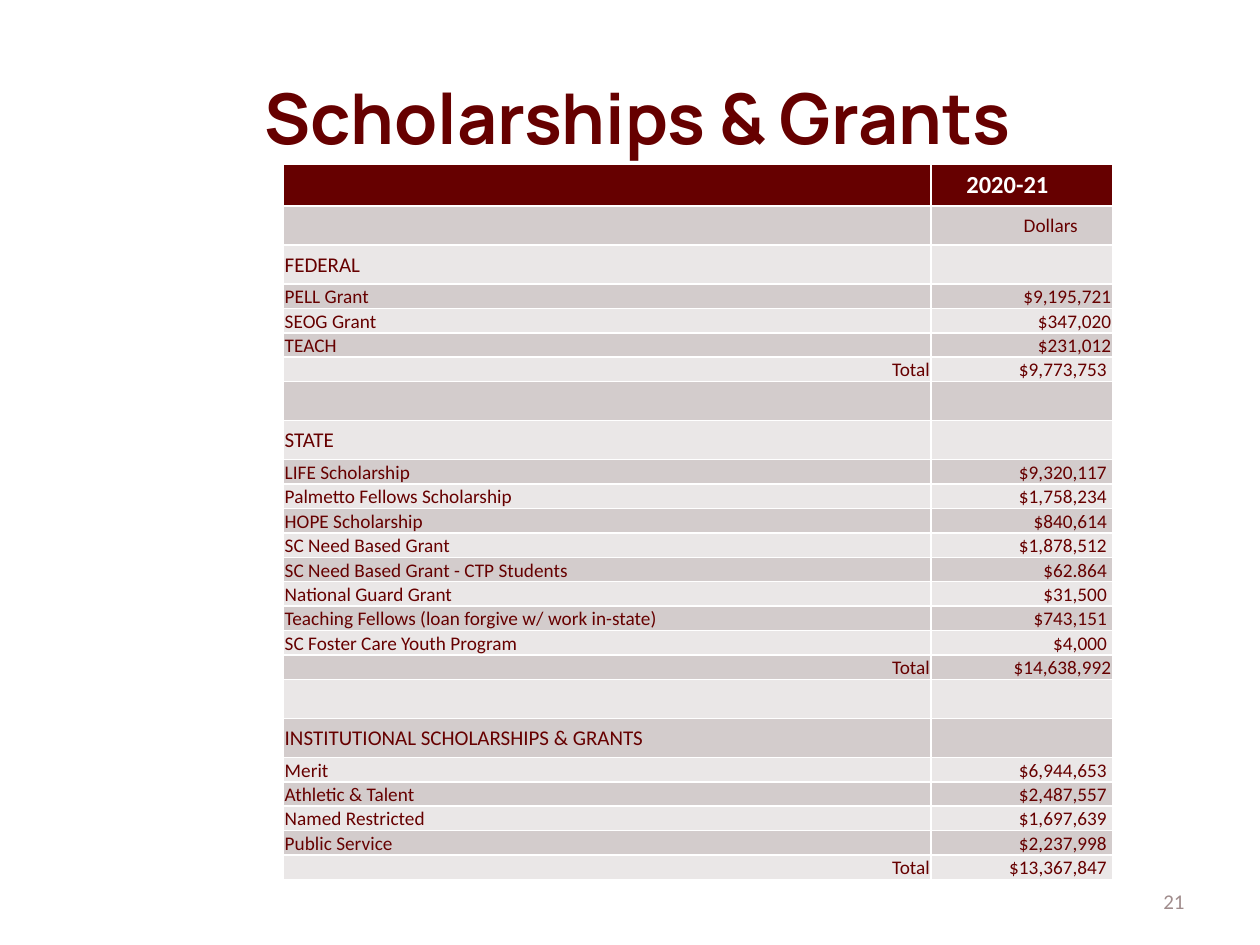
from dataclasses import dataclass

from lxml import etree
from pptx import Presentation
from pptx.dml.color import RGBColor
from pptx.enum.text import MSO_ANCHOR, PP_ALIGN
from pptx.oxml.ns import qn
from pptx.util import Inches, Pt

LEFT, CENTER, RIGHT = PP_ALIGN.LEFT, PP_ALIGN.CENTER, PP_ALIGN.RIGHT
MIDDLE = MSO_ANCHOR.MIDDLE
MAROON, WHITE, GRAY = "660000", "FFFFFF", "A08C8C"
BANDS = ("D3CCCC", "EAE7E7")
TALL, SHORT = 0.31, 0.19


@dataclass
class Entry:
    text: str = ""
    size: float = 11
    align: PP_ALIGN = LEFT
    indent: float = 0.01
    color: str = MAROON
    bold: bool = False


@dataclass
class Row:
    label: Entry
    amount: Entry
    height: float = SHORT


@dataclass
class Section:
    heading: str
    items: list[tuple[str, str]]
    total: str


SECTIONS = [
    Section("FEDERAL", [
        ("PELL Grant", "$9,195,721"),
        ("SEOG Grant", "$347,020"),
        ("TEACH", "$231,012"),
    ], "$9,773,753 "),
    Section("STATE", [
        ("LIFE Scholarship", "$9,320,117 "),
        ("Palmetto Fellows Scholarship", "$1,758,234 "),
        ("HOPE Scholarship", "$840,614 "),
        ("SC Need Based Grant", "$1,878,512 "),
        ("SC Need Based Grant - CTP Students", "$62.864 "),
        ("National Guard Grant", "$31,500 "),
        ("Teaching Fellows (loan forgive w/ work in-state)", "$743,151 "),
        ("SC Foster Care Youth Program", "$4,000 "),
    ], "$14,638,992"),
    Section("INSTITUTIONAL SCHOLARSHIPS & GRANTS", [
        ("Merit", "$6,944,653 "),
        ("Athletic & Talent", "$2,487,557 "),
        ("Named Restricted", "$1,697,639 "),
        ("Public Service", "$2,237,998 "),
    ], "$13,367,847 "),
]


def rgb(color: str) -> RGBColor:
    return RGBColor.from_string(color)


def apply(target, values: dict) -> None:
    for name, value in values.items():
        setattr(target, name, value)


def write(para, text: str, size: float, color: str, font: str = "Calibri",
          bold: bool = False, align: PP_ALIGN = LEFT) -> None:
    para.alignment = align
    span = para.add_run()
    span.text = text
    apply(span.font, {"name": font, "size": Pt(size), "bold": bold})
    span.font.color.rgb = rgb(color)


def fill_cell(cell, entry: Entry, fill: str) -> None:
    cell.fill.solid()
    cell.fill.fore_color.rgb = rgb(fill)
    para = cell.text_frame.paragraphs[0]
    if not entry.text:
        apply(cell, {"margin_top": Inches(0.05), "margin_bottom": Inches(0.05)})
        etree.SubElement(para._p, qn("a:endParaRPr"), sz=str(int(entry.size * 100)))
        return
    apply(cell, {
        "vertical_anchor": MIDDLE,
        "margin_left": Inches(entry.indent),
        "margin_top": Inches(0.01),
        "margin_right": Inches(0.01),
        "margin_bottom": 0,
    })
    write(para, entry.text, entry.size, entry.color, bold=entry.bold, align=entry.align)


def table_rows(sections: list[Section]) -> list[Row]:
    rows = [
        Row(Entry(size=14), Entry("2020-21", 14, indent=0.28, color=WHITE, bold=True), TALL),
        Row(Entry(), Entry("Dollars", align=CENTER, indent=0.47), TALL),
    ]
    for index, section in enumerate(sections):
        if index:
            rows.append(Row(Entry(), Entry(), TALL))
        rows.append(Row(Entry(section.heading, 12), Entry(), TALL))
        rows += [Row(Entry(label), Entry(amount, align=RIGHT))
                 for label, amount in section.items]
        rows.append(Row(Entry("Total", align=RIGHT), Entry(section.total, align=RIGHT)))
    return rows


def add_grants_table(page, rows: list[Row]) -> None:
    height = sum(row.height for row in rows)
    table = page.shapes.add_table(
        len(rows), 2, Inches(2.25), Inches(1.3), Inches(6.58), Inches(height)).table
    for column, width in zip(table.columns, (5.14, 1.44)):
        column.width = Inches(width)
    for index, row in enumerate(rows):
        table.rows[index].height = Inches(row.height)
        fill = BANDS[(index - 1) % 2] if index else MAROON
        for column, entry in enumerate((row.label, row.amount)):
            fill_cell(table.cell(index, column), entry, fill)


def add_title(page, text: str) -> None:
    title = page.shapes.title
    apply(title, {"left": Inches(2), "top": Inches(0.3),
                  "width": Inches(8), "height": Inches(1.25)})
    apply(title.text_frame, {"vertical_anchor": MIDDLE, "word_wrap": True})
    write(title.text_frame.paragraphs[0], text, 40, MAROON, "Manrope", True)


def add_page_number(page, number: str) -> None:
    box = page.shapes.add_textbox(Inches(7.17), Inches(6.95), Inches(2.33), Inches(0.4))
    apply(box.text_frame, {"vertical_anchor": MIDDLE, "word_wrap": True})
    write(box.text_frame.paragraphs[0], number, 12, GRAY, align=RIGHT)


def main() -> None:
    deck = Presentation()
    apply(deck, {"slide_width": Inches(10), "slide_height": Inches(7.5)})
    page = deck.slides.add_slide(deck.slide_layouts[5])
    add_title(page, "Scholarships & Grants")
    add_page_number(page, "21")
    add_grants_table(page, table_rows(SECTIONS))
    deck.save("out.pptx")


if __name__ == "__main__":
    main()
